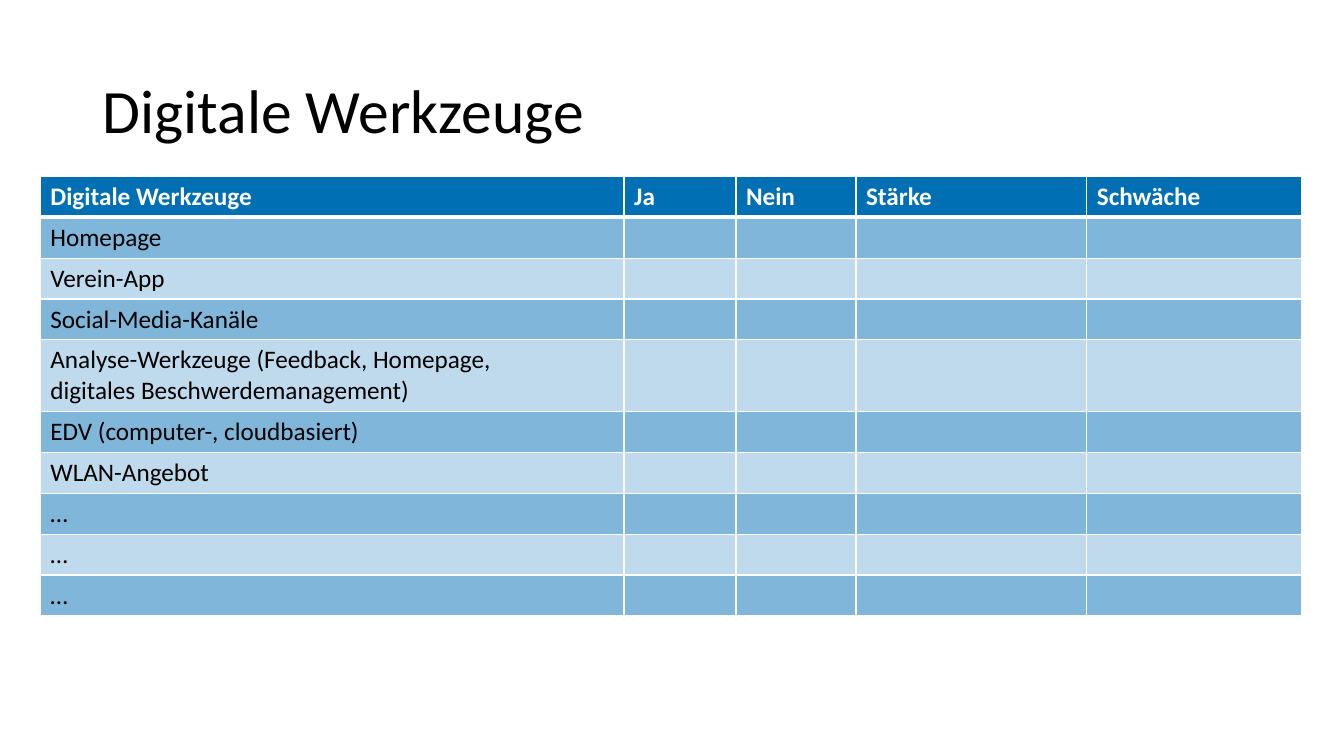
from lxml.etree import SubElement
from pptx import Presentation
from pptx.dml.color import RGBColor
from pptx.enum.text import MSO_ANCHOR, PP_ALIGN
from pptx.oxml.ns import qn
from pptx.util import Inches, Pt

TITLE = "Digitale Werkzeuge"
HEADINGS = ["Digitale Werkzeuge", "Ja", "Nein", "Stärke", "Schwäche"]
TOOLS = [
    "Homepage",
    "Verein-App",
    "Social-Media-Kanäle",
    "Analyse-Werkzeuge (Feedback, Homepage,\ndigitales Beschwerdemanagement)",
    "EDV (computer-, cloudbasiert)",
    "WLAN-Angebot",
    "…",
    "…",
    "…",
]
FONT = "Calibri"
BLUE, WHITE, BLACK = "006FB4", "FFFFFF", "000000"
BAND_OPACITY = (50, 25)
THIN, THICK = 1, 3

SLIDE_W, SLIDE_H = 13.33, 7.5
TABLE_LEFT, TABLE_TOP, TABLE_H = 0.4, 1.75, 4.35
COLUMN_WIDTHS = [5.79, 1.11, 1.19, 2.29, 2.13]
TWO_LINE_H = 0.7


def rgb(hex_color):
    return RGBColor.from_string(hex_color)


def style_text(frame, size, color, bold=False):
    for paragraph in frame.paragraphs:
        font = paragraph.font
        for target in [font] + [run.font for run in paragraph.runs]:
            target.name, target.size, target.bold = FONT, Pt(size), bold
            target.color.rgb = rgb(color)


def add_borders(cell, top, bottom):
    properties = cell._tc.get_or_add_tcPr()
    for side, width in zip("LRTB", (THIN, THIN, top, bottom)):
        line = SubElement(properties, qn(f"a:ln{side}"), w=str(Pt(width)))
        SubElement(SubElement(line, qn("a:solidFill")), qn("a:srgbClr"), val=WHITE)


def fill_cell(cell, opacity):
    cell.fill.solid()
    cell.fill.fore_color.rgb = rgb(BLUE)
    if opacity < 100:
        color = cell._tc.tcPr.find(f".//{qn('a:solidFill')}[last()]")
        color = cell._tc.tcPr.find(f"{qn('a:solidFill')}/{qn('a:srgbClr')}")
        SubElement(color, qn("a:alpha"), val=str(opacity * 1000))


def add_title(slide):
    title = slide.shapes.title
    title.left, title.top = Inches(0.92), Inches(0.4)
    title.width, title.height = Inches(11.5), Inches(1.45)
    frame = title.text_frame
    frame.text = TITLE
    frame.vertical_anchor = MSO_ANCHOR.MIDDLE
    frame.paragraphs[0].alignment = PP_ALIGN.LEFT
    frame.paragraphs[0].line_spacing = 0.9
    style_text(frame, 44, BLACK)


def add_tool_table(slide):
    rows = [HEADINGS] + [[tool] + [""] * (len(HEADINGS) - 1) for tool in TOOLS]
    two_line_rows = sum("\n" in tool for tool in TOOLS)
    row_h = (TABLE_H - two_line_rows * TWO_LINE_H) / (len(rows) - two_line_rows)
    table = slide.shapes.add_table(
        len(rows), len(HEADINGS), Inches(TABLE_LEFT), Inches(TABLE_TOP),
        Inches(sum(COLUMN_WIDTHS)), Inches(TABLE_H)).table
    for column, width in zip(table.columns, COLUMN_WIDTHS):
        column.width = Inches(width)
    for r, texts in enumerate(rows):
        header = r == 0
        table.rows[r].height = Inches(TWO_LINE_H if "\n" in texts[0] else row_h)
        for c, text in enumerate(texts):
            cell = table.cell(r, c)
            cell.text_frame.text = text
            style_text(cell.text_frame, 18, WHITE if header else BLACK, header)
            add_borders(cell, THICK if r == 1 else THIN, THICK if header else THIN)
            fill_cell(cell, 100 if header else BAND_OPACITY[(r - 1) % 2])


def main():
    deck = Presentation()
    deck.slide_width, deck.slide_height = Inches(SLIDE_W), Inches(SLIDE_H)
    slide = deck.slides.add_slide(deck.slide_layouts[5])
    add_title(slide)
    add_tool_table(slide)
    deck.save("out.pptx")


if __name__ == "__main__":
    main()
